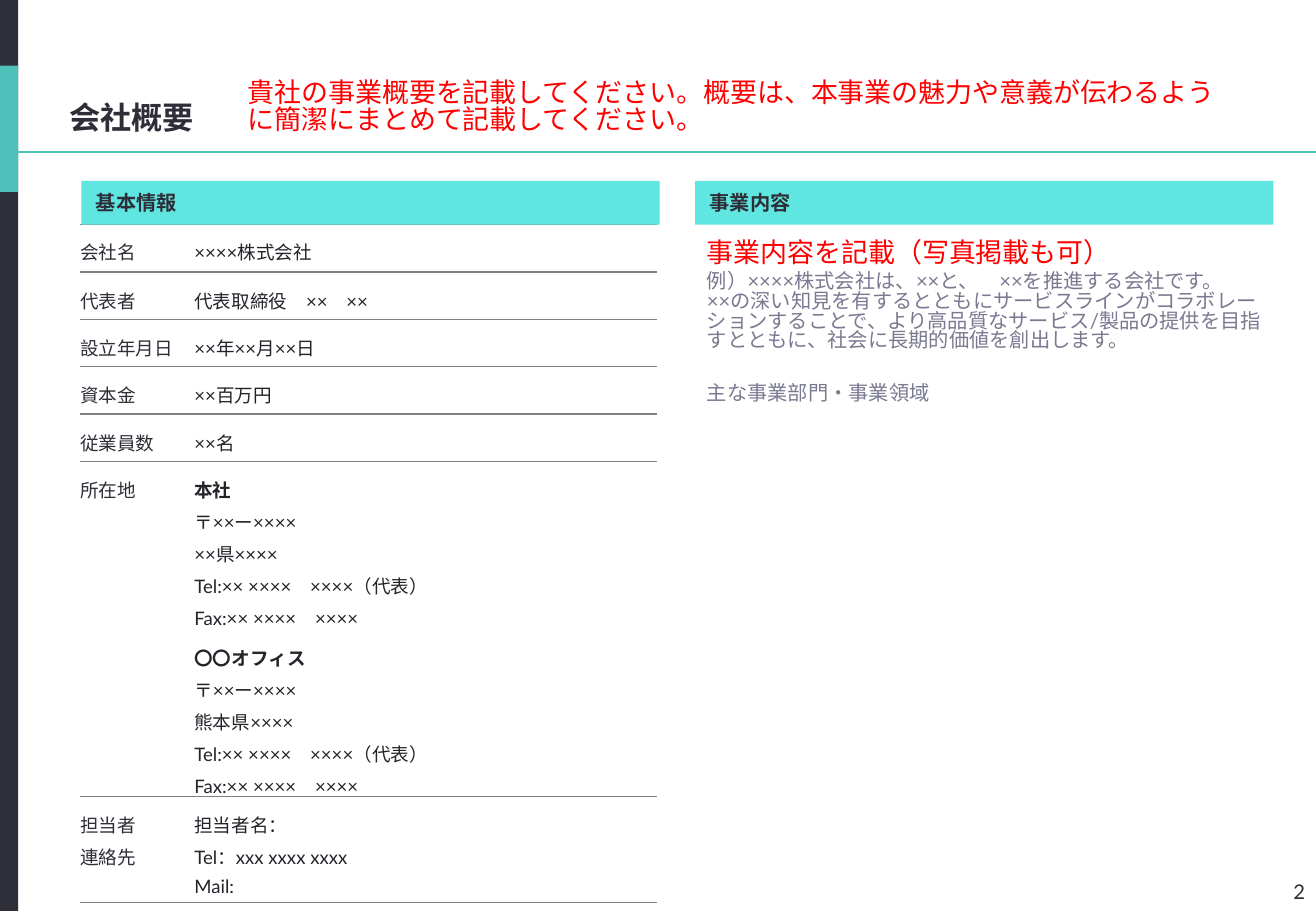
"""Builds the company overview slide with its profile table and business panel."""
import lxml.etree
import pptx
import pptx.dml.color
import pptx.enum.shapes
import pptx.enum.text
import pptx.oxml.ns
import pptx.util

RGBColor = pptx.dml.color.RGBColor
INK = RGBColor(0x2E, 0x2E, 0x38)
DARK = RGBColor(0x23, 0x23, 0x2A)
TEAL = RGBColor(0x4E, 0xC0, 0xBA)
AQUA = RGBColor(0x60, 0xE6, 0xE1)
RED = RGBColor(0xFF, 0x00, 0x00)
MUTED = RGBColor(0x79, 0x79, 0x91)
GREY = RGBColor(0x80, 0x80, 0x80)
LATIN, ASIAN = "Lato", "Noto Sans CJK JP"

TITLE = "会社概要"
GUIDE = "貴社の事業概要を記載してください。概要は、本事業の魅力や意義が伝わるように簡潔にまとめて記載してください。"
HEADINGS = ["基本情報", "事業内容"]
PROMPT = "事業内容を記載（写真掲載も可）"
EXAMPLE = (
    "例）××××株式会社は、××と、　××を推進する会社です。　××の深い知見を有するとともに"
    "サービスラインがコラボレーションすることで、より高品質なサービス/製品の提供を目指すとともに、"
    "社会に長期的価値を創出します。"
)
DIVISIONS = "主な事業部門・事業領域"
PAGE_NUMBER = "2"
PHONES = ["Tel:×× ××××　××××（代表）", "Fax:×× ××××　××××"]
PROFILE = [
    (["会社名"], ["××××株式会社"]),
    (["代表者"], ["代表取締役　××　××"]),
    (["設立年月日"], ["××年××月××日"]),
    (["資本金"], ["××百万円"]),
    (["従業員数"], ["××名"]),
    (["所在地"], ["本社", "〒××ー××××", "××県××××", *PHONES]),
    ([], ["〇〇オフィス", "〒××ー××××", "熊本県××××", *PHONES]),
    (["担当者", "連絡先"], ["担当者名：", "Tel：xxx xxxx xxxx", "Mail:"]),
]
OFFICES = ["本社", "〇〇オフィス"]
OFFICE_ROWS = (5, 6)

CELL = pptx.util.Inches(0.1)
COLUMNS, ROWS = 108.3, 75
PANEL_LEFTS, PANEL_WIDTH = (6.7, 57.2), 47.6
HEADING_TOP, HEADING_HEIGHT = 14.9, 3.6
TABLE_LEFT, TABLE_TOP = 6.6, HEADING_TOP + HEADING_HEIGHT
TABLE_COLUMNS = [9.4, 38.1]
TABLE_ROWS = [3.9] * 5 + [13.8] * 2 + [8.7]
TIGHT = 0.82


def grid(*cells):
    return [round(cell * CELL) for cell in cells]


def set_insets(holder, *cells):
    (holder.margin_left, holder.margin_top,
     holder.margin_right, holder.margin_bottom) = grid(*cells)


def write(para, text, size, color, bold=False, latin=LATIN, before=0, after=0, spacing=1.0):
    para.text = text
    font = para.font
    font.size, font.bold, font.name = pptx.util.Pt(size), bold, latin
    font.color.rgb = color
    asian = lxml.etree.SubElement(font._element, pptx.oxml.ns.qn("a:ea"))
    asian.set("typeface", ASIAN)
    para.space_before, para.space_after = pptx.util.Pt(before), pptx.util.Pt(after)
    para.line_spacing = spacing


def add_block(page, place, color, outline=None):
    block = page.shapes.add_shape(pptx.enum.shapes.MSO_SHAPE.RECTANGLE, *grid(*place))
    block.shadow.inherit = False
    block.fill.solid()
    block.fill.fore_color.rgb = color
    block.line.fill.background()
    return block


def add_text(page, place, insets=(1, 0.5, 1, 0.5)):
    frame = page.shapes.add_textbox(*grid(*place)).text_frame
    frame.word_wrap = True
    set_insets(frame, *insets)
    return frame


def set_border(cell, side, color=None):
    edge = lxml.etree.SubElement(
        cell._tc.get_or_add_tcPr(), pptx.oxml.ns.qn("a:ln" + side), w=str(pptx.util.Pt(1)))
    if color is None:
        lxml.etree.SubElement(edge, pptx.oxml.ns.qn("a:noFill"))
    else:
        solid = lxml.etree.SubElement(edge, pptx.oxml.ns.qn("a:solidFill"))
        lxml.etree.SubElement(solid, pptx.oxml.ns.qn("a:srgbClr"), val=str(color))


def fill_cell(cell, lines, color, row):
    first = row == 0
    upper, lower = OFFICE_ROWS
    borders = {"L": None, "R": None,
               "T": None if row == lower else GREY,
               "B": None if row == upper else GREY}
    for side, shade in borders.items():
        set_border(cell, side, shade)
    cell.fill.background()
    set_insets(cell, 0, 0.8 if first else 1.2, 0, 0)
    frame = cell.text_frame
    for index, line in enumerate(lines):
        para = frame.add_paragraph() if index else frame.paragraphs[0]
        write(para, line, 11, color, line in OFFICES,
              after=8 if first else 3, spacing=1.14 if first else 1.0)


def add_profile(page):
    frame = page.shapes.add_table(
        len(PROFILE), len(TABLE_COLUMNS),
        *grid(TABLE_LEFT, TABLE_TOP, sum(TABLE_COLUMNS), sum(TABLE_ROWS)))
    table = frame.table
    table.first_row = table.horz_banding = False
    for column, width in zip(table.columns, grid(*TABLE_COLUMNS)):
        column.width = width
    for row, height in zip(table.rows, grid(*TABLE_ROWS)):
        row.height = height
    for row, (label, details) in enumerate(PROFILE):
        fill_cell(table.cell(row, 0), label, INK, row)
        fill_cell(table.cell(row, 1), details, DARK, row)
    upper, lower = OFFICE_ROWS
    table.cell(upper, 0).merge(table.cell(lower, 0))


def add_frame(page):
    add_block(page, (0, 0, 1.5, ROWS), INK)
    add_block(page, (0, 5.4, 1.5, 10.4), TEAL)
    rule = page.shapes.add_connector(
        pptx.enum.shapes.MSO_CONNECTOR.STRAIGHT, *grid(0, 12.5, COLUMNS, 12.5))
    rule.line.color.rgb = TEAL
    rule.line.width = pptx.util.Pt(1.5)
    lxml.etree.SubElement(rule._element.spPr, pptx.oxml.ns.qn("a:effectLst"))
    number = add_text(page, (103.4, 73, 4, 1.4), (0, 0, 0, 0))
    number.vertical_anchor = pptx.enum.text.MSO_ANCHOR.BOTTOM
    write(number.paragraphs[0], PAGE_NUMBER, 12, INK)
    number.paragraphs[0].alignment = pptx.enum.text.PP_ALIGN.RIGHT


def add_headings(page):
    for left, heading in zip(PANEL_LEFTS, HEADINGS):
        frame = add_block(page, (left, HEADING_TOP, PANEL_WIDTH, HEADING_HEIGHT), AQUA).text_frame
        set_insets(frame, 1.2, 0.8, 1.2, 0.8)
        frame.vertical_anchor = pptx.enum.text.MSO_ANCHOR.MIDDLE
        write(frame.paragraphs[0], heading, 12, INK, True)
        frame.paragraphs[0].alignment = pptx.enum.text.PP_ALIGN.LEFT


def main():
    deck = pptx.Presentation()
    deck.slide_width, deck.slide_height = grid(COLUMNS, ROWS)
    page = deck.slides.add_slide(deck.slide_layouts[6])
    add_frame(page)
    title = add_text(page, (5.7, 5.4, 97, 5.8), (0, 2.7, 0, 0))
    write(title.paragraphs[0], TITLE, 18.5, INK, True)
    guide = add_text(page, (19.4, 6.2, 83.2, 5.8))
    write(guide.paragraphs[0], GUIDE, 16, RED, latin=ASIAN, spacing=TIGHT)
    add_profile(page)
    add_headings(page)
    business = add_text(page, (PANEL_LEFTS[1], 19.4, PANEL_WIDTH, 49.5))
    write(business.paragraphs[0], PROMPT, 16, RED, latin=ASIAN, spacing=TIGHT)
    write(business.add_paragraph(), EXAMPLE, 12, MUTED, before=2.4, spacing=TIGHT)
    write(business.add_paragraph(), DIVISIONS, 12, MUTED, before=19.5, spacing=TIGHT)
    deck.save("out.pptx")


if __name__ == "__main__":
    main()
